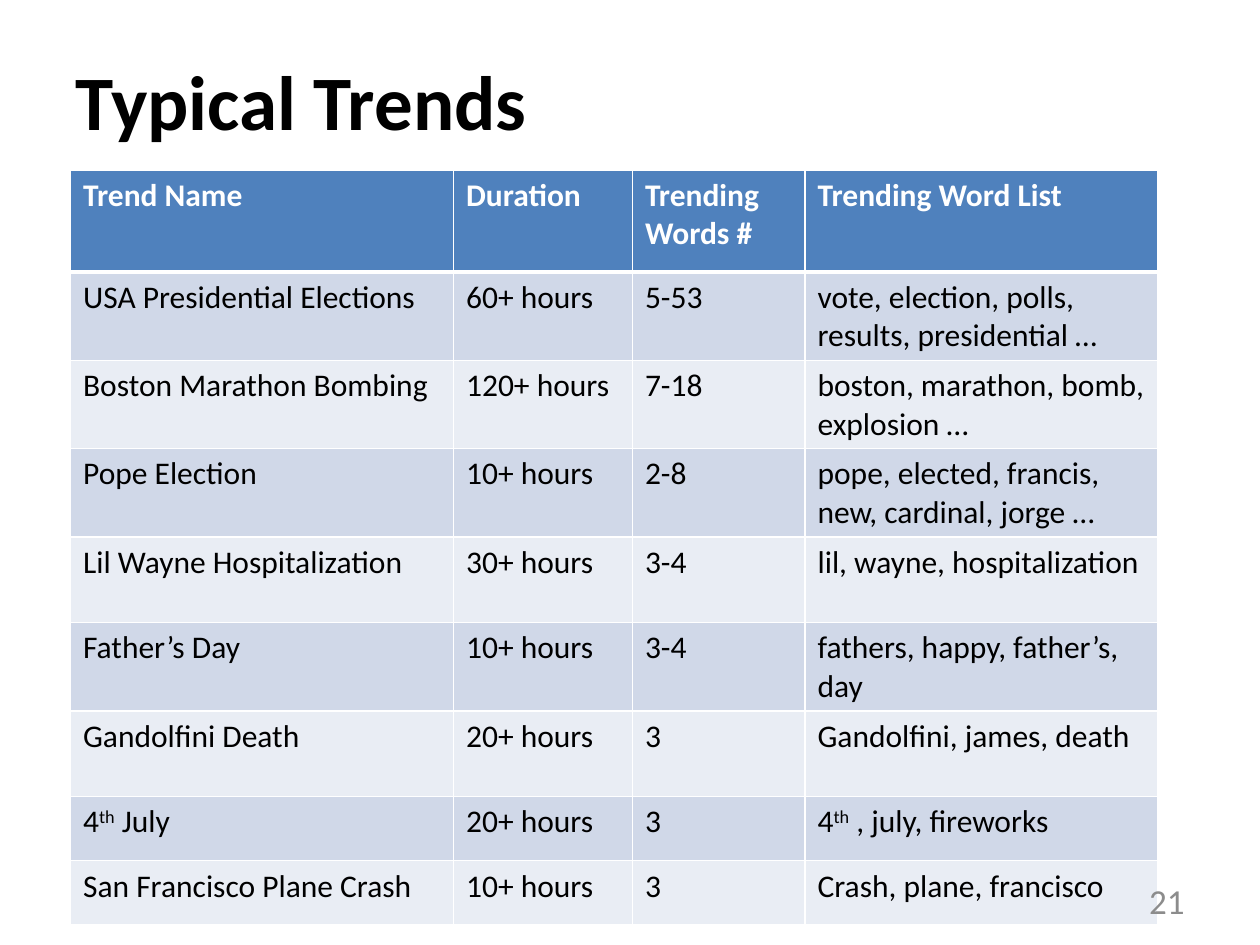
from lxml import etree
from pptx import Presentation
from pptx.dml.color import RGBColor
from pptx.enum.text import MSO_ANCHOR, PP_ALIGN
from pptx.oxml.ns import qn
from pptx.util import Inches, Pt

MIDDLE = MSO_ANCHOR.MIDDLE
LEFT, RIGHT = PP_ALIGN.LEFT, PP_ALIGN.RIGHT

THEME = {
    "font": "Calibri",
    "title_size": 44, "table_size": 18, "number_size": 20,
    "ink": "000000", "paper": "FFFFFF", "grey": "8C8C8C",
    "header": "4F81BD", "bands": ("D0D8E8", "E9EDF4"),
    "rule": 1, "header_rule": 3,
}

# Table content; a part between carets is raised
HEADER = ("Trend Name", "Duration", "Trending Words #", "Trending Word List")
TRENDS = (
    ("USA Presidential Elections", "60+ hours", "5-53",
     "vote, election, polls, results, presidential …"),
    ("Boston Marathon Bombing", "120+ hours", "7-18",
     "boston, marathon, bomb, explosion …"),
    ("Pope Election", "10+ hours", "2-8",
     "pope, elected, francis, new, cardinal, jorge …"),
    ("Lil Wayne Hospitalization", "30+ hours", "3-4", "lil, wayne, hospitalization"),
    ("Father’s Day", "10+ hours", "3-4", "fathers, happy, father’s, day"),
    ("Gandolfini Death", "20+ hours", "3", "Gandolfini, james, death"),
    ("4^th^ July", "20+ hours", "3", "4^th^ , july, fireworks"),
    ("San Francisco Plane Crash", "10+ hours", "3", "Crash, plane, francisco"),
)
COLUMN_WIDTHS = (3.04, 1.42, 1.37, 2.8)
ROW_HEIGHTS = (0.81,) + (0.68,) * 6 + (0.51,) * 2


def write(frame, text, size, color, bold=False, align=LEFT):
    """Fill the first paragraph run by run, raising the parts between carets."""
    para = frame.paragraphs[0]
    para.alignment = align
    for index, part in enumerate(text.split("^")):
        span = para.add_run()
        span.text = part
        span.font.name = THEME["font"]
        span.font.size = Pt(size)
        span.font.bold = bold
        span.font.color.rgb = RGBColor.from_string(color)
        if index % 2:
            span.font._element.set("baseline", "30000")


def rule_cell(cell, widths):
    """Draw the cell borders, which must stand before the fill."""
    properties = cell._tc.get_or_add_tcPr()
    for place, (side, width) in enumerate(widths.items()):
        line = etree.Element(qn(f"a:{side}"), w=str(Pt(width)))
        fill = etree.SubElement(line, qn("a:solidFill"))
        etree.SubElement(fill, qn("a:srgbClr"), val=THEME["paper"])
        properties.insert(place, line)


deck = Presentation()
deck.slide_width, deck.slide_height = Inches(10), Inches(7.5)
page = deck.slides.add_slide(deck.slide_layouts[6])

# Title
title_box = page.shapes.add_textbox(Inches(0.5), Inches(0.25), Inches(9), Inches(1.08))
title_box.text_frame.word_wrap = True
title_box.text_frame.vertical_anchor = MIDDLE
write(title_box.text_frame, "Typical Trends", THEME["title_size"], THEME["ink"], bold=True)

# Trend table
table = page.shapes.add_table(
    len(ROW_HEIGHTS), len(COLUMN_WIDTHS), Inches(0.56), Inches(1.35),
    Inches(sum(COLUMN_WIDTHS)), Inches(sum(ROW_HEIGHTS))).table
for column, width in zip(table.columns, COLUMN_WIDTHS):
    column.width = Inches(width)
for row, height in zip(table.rows, ROW_HEIGHTS):
    row.height = Inches(height)

for row_index, texts in enumerate((HEADER,) + TRENDS):
    is_header = row_index == 0
    fill_color = THEME["header"] if is_header else THEME["bands"][(row_index - 1) % 2]
    text_color = THEME["paper"] if is_header else THEME["ink"]
    borders = dict.fromkeys(("lnL", "lnR", "lnT", "lnB"), THEME["rule"])
    if is_header:
        borders["lnB"] = THEME["header_rule"]
    elif row_index == 1:
        borders["lnT"] = THEME["header_rule"]
    for column_index, text in enumerate(texts):
        cell = table.cell(row_index, column_index)
        cell.fill.solid()
        cell.fill.fore_color.rgb = RGBColor.from_string(fill_color)
        rule_cell(cell, borders)
        write(cell.text_frame, text, THEME["table_size"], text_color, bold=is_header)

# Slide number
number_box = page.shapes.add_textbox(Inches(7.17), Inches(6.95), Inches(2.33), Inches(0.4))
number_box.text_frame.word_wrap = True
number_box.text_frame.vertical_anchor = MIDDLE
write(number_box.text_frame, "21", THEME["number_size"], THEME["grey"], align=RIGHT)

deck.save("out.pptx")
